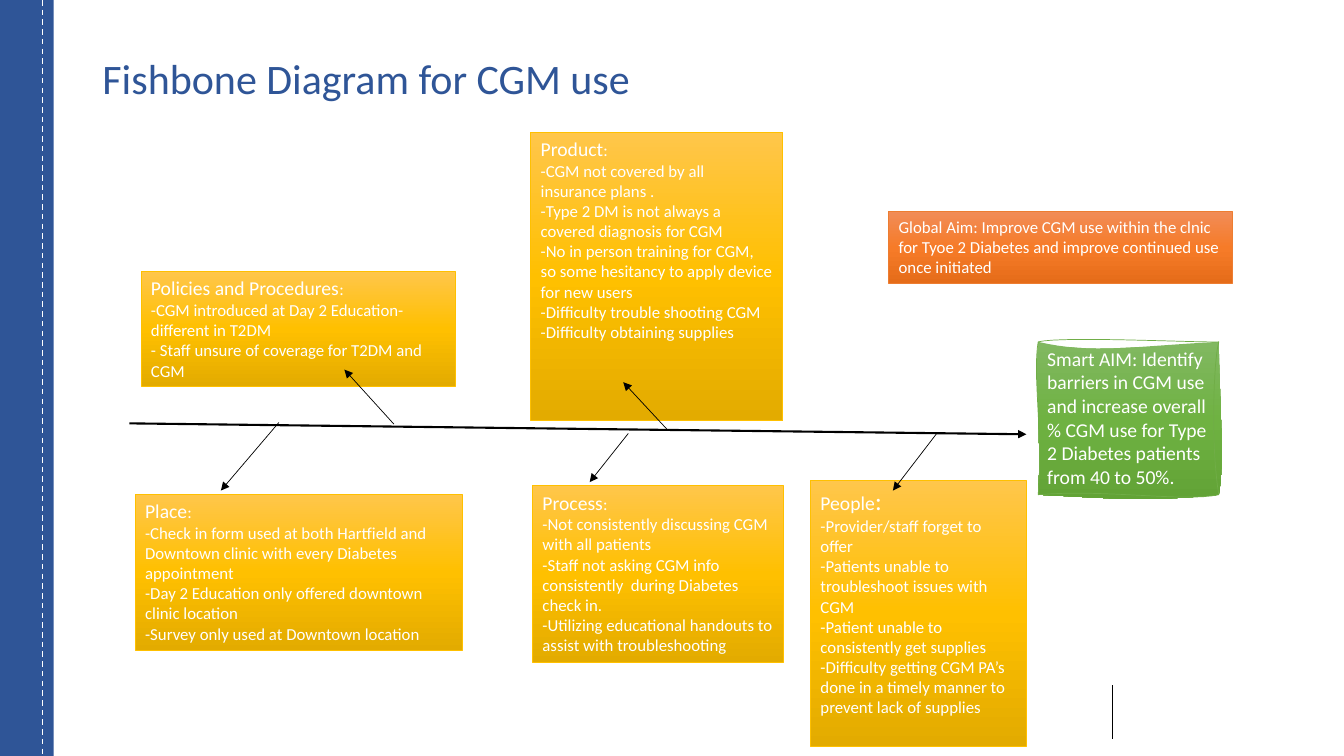
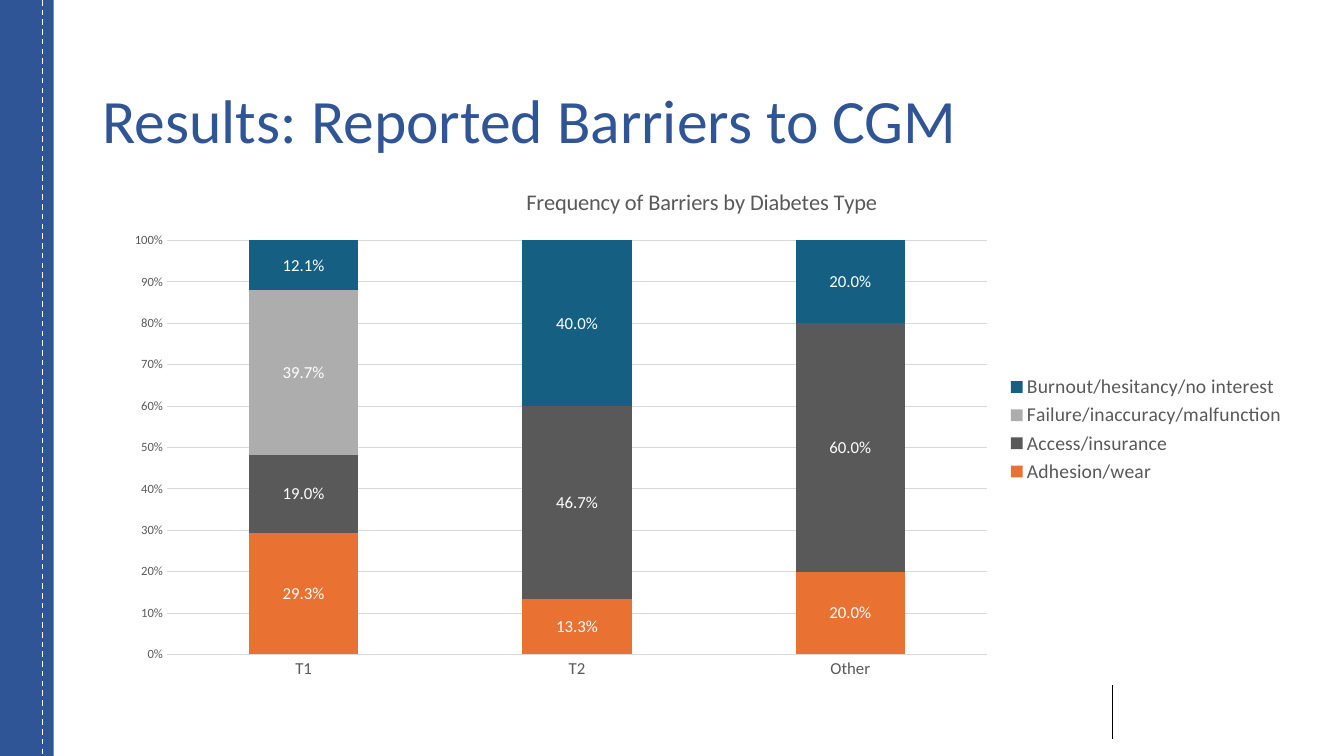
"""Build a fishbone diagram slide and a results chart slide on one shared layout."""
from copy import deepcopy

from pptx import Presentation
from pptx import util as u
from pptx.chart import data
from pptx.dml.color import RGBColor
from pptx.enum import chart as charts, dml, shapes, text
from pptx.oxml import ns, xmlchemy

CELL = u.Pt(6)
COLS, ROWS = 160, 90
HEX = {
    "blue": "2F5597", "white": "FFFFFF", "black": "000000",
    "grey": "595959", "grid": "D9D9D9",
    "gold": "FFC000", "orange": "ED7D31", "green": "70AD47",
}
GRADIENTS = {
    "gold": ("FFC64B", "FFC000", "E3AB00"),
    "orange": ("F18C57", "F67B28", "E56C19"),
    "green": ("81B861", "6FB242", "62A336"),
}
RGB = {name: RGBColor.from_string(value) for name, value in HEX.items()}


def style(font, size, colour):
    for key, value in {"name": "Calibri", "size": u.Pt(size), "bold": False}.items():
        setattr(font, key, value)
    font.color.rgb = RGB[colour]


def rule(slide, ends, weight, colour="black", dash=None, arrow=False):
    line = slide.shapes.add_connector(
        shapes.MSO_CONNECTOR.STRAIGHT, *(round(v * CELL) for v in ends))
    line.line.color.rgb = RGB[colour]
    line.line.width = u.Pt(weight)
    if dash:
        line.line.dash_style = dash
    if arrow:
        head = xmlchemy.OxmlElement("a:tailEnd")
        head.set("type", "triangle")
        line.line._get_or_add_ln().append(head)
    line.element.spPr.append(xmlchemy.OxmlElement("a:effectLst"))
    return line


deck = Presentation()
deck.slide_width, deck.slide_height = COLS * CELL, ROWS * CELL
layout = deck.slide_layouts.get_by_name("Title Only")
for holder in list(layout.placeholders):
    if holder.placeholder_format.type != shapes.PP_PLACEHOLDER.TITLE:
        holder.element.getparent().remove(holder.element)

titles = [
    ("Fishbone Diagram for CGM use", 30, 4.8, 9.7),
    ("Results: Reported Barriers to CGM", 44, 6, 17.4),
]
for words, size, top, height in titles:
    title = deck.slides.add_slide(layout).shapes.title
    place = {"left": 11, "top": top, "width": 138, "height": height}
    for side, cells in place.items():
        setattr(title, side, round(cells * CELL))
    title.text_frame.text = words
    title.text_frame.vertical_anchor = text.MSO_ANCHOR.MIDDLE
    heading = title.text_frame.paragraphs[0]
    heading.alignment = text.PP_ALIGN.LEFT
    heading.line_spacing = 0.9
    style(heading.font, size, "blue")
fishbone, results = deck.slides

band = fishbone.shapes.add_shape(
    shapes.MSO_SHAPE.RECTANGLE, 0, 0, round(6.4 * CELL), ROWS * CELL)
band.shadow.inherit = False
band.fill.solid()
band.fill.fore_color.rgb = RGB["blue"]
band.line.fill.background()
stitch = rule(fishbone, (5.04, 0, 5.04, ROWS), 1, "white", dml.MSO_LINE.DASH)
footer_mark = rule(fishbone, (132.5, 81.6, 132.5, 88), 0.75)
for part in (band, stitch, footer_mark):
    layout.shapes.element.append(part.element)

rule(fishbone, (15.4, 50.4, 122.2, 51.7), 1.5, arrow=True)

corners = [(123.6, 40.7), (145.1, 40.7), (145.1, 58.9), (123.6, 58.9)]
body_bends = [
    ((130, 42.2), (135, 41.2)), ((145.2, 48.4), (145.8, 55)),
    ((136.1, 59.8), (132.4, 59.3)), ((124, 52.9), (123.2, 43.4)),
]
edge_bends = [
    ((126.4, 40), (142.4, 40.8)), ((144.5, 42.8), (144.1, 52.9)),
    ((140.9, 59.8), (131.5, 58.2)), ((124.2, 51.6), (122.9, 44.6)),
]
STEPS = 16
scroll_parts = []
for bends in (body_bends, edge_bends):
    curve = []
    for side, (near, far) in enumerate(bends):
        start, end = corners[side], corners[(side + 1) % 4]
        for step in range(1, STEPS + 1):
            t = step / STEPS
            weights = ((1 - t) ** 3, 3 * t * (1 - t) ** 2, 3 * t * t * (1 - t), t ** 3)
            curve.append(tuple(
                round(CELL * sum(w * p[axis] for w, p in zip(weights, (start, near, far, end))))
                for axis in (0, 1)))
    builder = fishbone.shapes.build_freeform(*curve[-1])
    builder.add_line_segments(curve, close=True)
    scroll_parts.append(builder.convert_to_shape())
smart_aim, scroll_edge = scroll_parts
scroll_edge.shadow.inherit = False
scroll_edge.fill.background()
scroll_edge.line.color.rgb = RGB["green"]
scroll_edge.line.width = u.Pt(0.5)

panels = [
    ("green", None, [[(
        "Smart AIM: Identify barriers in CGM use and increase overall % CGM use "
        "for Type 2 Diabetes patients from 40 to 50%.", 14)]]),
    ("gold", (16.1, 58.8, 38.9, 18.6), [
        [("Place", 14), (":", 12)],
        [("-Check in form used at both Hartfield and Downtown clinic with every "
          "Diabetes appointment", 12)],
        [("-Day 2 Education only offered downtown clinic location", 12)],
        [("-Survey only used at Downtown location", 12)]]),
    ("gold", (16.8, 32.3, 37.4, 13.7), [
        [("Policies and Procedures", 14), (":", 12)],
        [("-CGM introduced at Day 2 Education-different in T2DM", 12)],
        [("- Staff unsure of coverage for T2DM and CGM", 12)]]),
    ("gold", (63.2, 15.7, 30, 34.4), [
        [("Product", 14), (":", 12)],
        [("-CGM not covered by all insurance plans .", 12)],
        [("-Type 2 DM is not always a covered diagnosis for CGM", 12)],
        [("-No in person training for CGM, so some hesitancy to apply device "
          "for new users", 12)],
        [("-Difficulty trouble shooting CGM", 12)],
        [("-Difficulty obtaining supplies", 12)]]),
    ("gold", (96.5, 57.2, 25.7, 31.6), [
        [("People", 14), (":", 18)],
        [("-Provider/staff forget to offer", 12)],
        [("-Patients unable to troubleshoot issues with CGM", 12)],
        [("-Patient unable to consistently get supplies", 12)],
        [("-Difficulty getting CGM PA’s done in a timely manner to prevent "
          "lack of supplies", 12)]]),
    ("gold", (63.4, 57.8, 29.9, 21), [
        [("Process", 14), (":", 12)],
        [("-Not consistently discussing CGM with all patients", 12)],
        [("-Staff not asking CGM info consistently  during Diabetes check in.", 12)],
        [("-Utilizing educational handouts to assist with troubleshooting", 12)]]),
    ("orange", (105.8, 25.2, 40.9, 8.6), [[(
        "Global Aim: Improve CGM use within the clnic for Tyoe 2 Diabetes and "
        "improve continued use once initiated", 12)]]),
]
for colour, box, causes in panels:
    if box:
        panel = fishbone.shapes.add_shape(
            shapes.MSO_SHAPE.RECTANGLE, *(round(v * CELL) for v in box))
        panel.line.color.rgb = RGB[colour]
        panel.line.width = u.Pt(0.5)
    else:
        panel = smart_aim
        panel.line.fill.background()
    panel.shadow.inherit = False
    panel.fill.gradient()
    panel.fill.gradient_angle = 270
    stop_list = panel.element.spPr.find(".//" + ns.qn("a:gsLst"))
    stop_list.insert(1, deepcopy(stop_list[0]))
    for stop, shade, position in zip(panel.fill.gradient_stops, GRADIENTS[colour], (0, 0.5, 1)):
        stop.color.rgb = RGBColor.from_string(shade)
        stop.position = position
    frame = panel.text_frame
    frame.word_wrap = True
    frame.vertical_anchor = text.MSO_ANCHOR.TOP
    for index, pieces in enumerate(causes):
        cause = frame.add_paragraph() if index else frame.paragraphs[0]
        cause.alignment = text.PP_ALIGN.LEFT
        for words, size in pieces:
            run = cause.add_run()
            run.text = words
            style(run.font, size, "white")

bones = [
    (46.9, 50.5, 41, 44), (79.4, 51.1, 74.2, 45.5), (33.2, 50.3, 26.3, 58.4),
    (74.8, 51.6, 70.2, 57.4), (111.6, 51.5, 106.3, 58.4),
]
for bone in bones:
    rule(fishbone, bone, 0.5, arrow=True)

barriers = [
    ("Adhesion/wear", "E97132", (0.293, 0.133, 0.2)),
    ("Access/insurance", "595959", (0.19, 0.467, 0.6)),
    ("Failure/inaccuracy/malfunction", "ADADAD", (0.397, 0, 0)),
    ("Burnout/hesitancy/no interest", "156082", (0.121, 0.4, 0.2)),
]
figures = data.CategoryChartData(number_format="0.0%")
figures.categories = ["T1", "T2", "Other"]
for name, _, shares in barriers:
    figures.add_series(name, shares)
chart = results.shapes.add_chart(
    charts.XL_CHART_TYPE.COLUMN_STACKED_100,
    *(round(v * CELL) for v in (12.8, 19.9, 141.5, 62.4)), figures).chart
style(chart.font, 10, "black")
chart.has_title = True
chart.chart_title.text_frame.text = "Frequency of Barriers by Diabetes Type"
style(chart.chart_title.text_frame.paragraphs[0].runs[0].font, 16, "grey")
chart.chart_title.include_in_layout = False
chart.has_legend = True
chart.legend.position = charts.XL_LEGEND_POSITION.RIGHT
chart.legend.include_in_layout = False
style(chart.legend.font, 14, "grey")

for axis, size in ((chart.category_axis, 12), (chart.value_axis, 9)):
    axis.major_tick_mark = axis.minor_tick_mark = charts.XL_TICK_MARK.NONE
    style(axis.tick_labels.font, size, "grey")
scale = chart.value_axis
scale.minimum_scale, scale.maximum_scale, scale.major_unit = 0, 1, 0.1
scale.tick_labels.number_format = "0%"
scale.tick_labels.number_format_is_linked = False
scale.format.line.fill.background()
for line in (chart.category_axis.format.line, scale.major_gridlines.format.line):
    line.color.rgb = RGB["grid"]
    line.width = u.Pt(0.75)

plot = chart.plots[0]
plot.gap_width, plot.overlap = 150, 100
plot.vary_by_categories = False
for series, (_, shade, _) in zip(plot.series, barriers):
    series.format.fill.solid()
    series.format.fill.fore_color.rgb = RGBColor.from_string(shade)
    labels = series.data_labels
    labels.show_value = True
    labels.number_format = "0.0%;;"
    labels.number_format_is_linked = False
    style(labels.font, 12, "white")

plot_area = chart.element.find(".//" + ns.qn("c:plotArea"))
for old in plot_area.findall(ns.qn("c:layout")):
    plot_area.remove(old)
area_layout = xmlchemy.OxmlElement("c:layout")
manual = xmlchemy.OxmlElement("c:manualLayout")
area_layout.append(manual)
area_place = {
    "layoutTarget": "inner", "xMode": "edge", "yMode": "edge",
    "x": 0.05, "y": 0.14, "w": 0.69, "h": 0.79,
}
for tag, value in area_place.items():
    setting = xmlchemy.OxmlElement("c:" + tag)
    setting.set("val", str(value))
    manual.append(setting)
plot_area.insert(0, area_layout)

deck.save("out.pptx")
